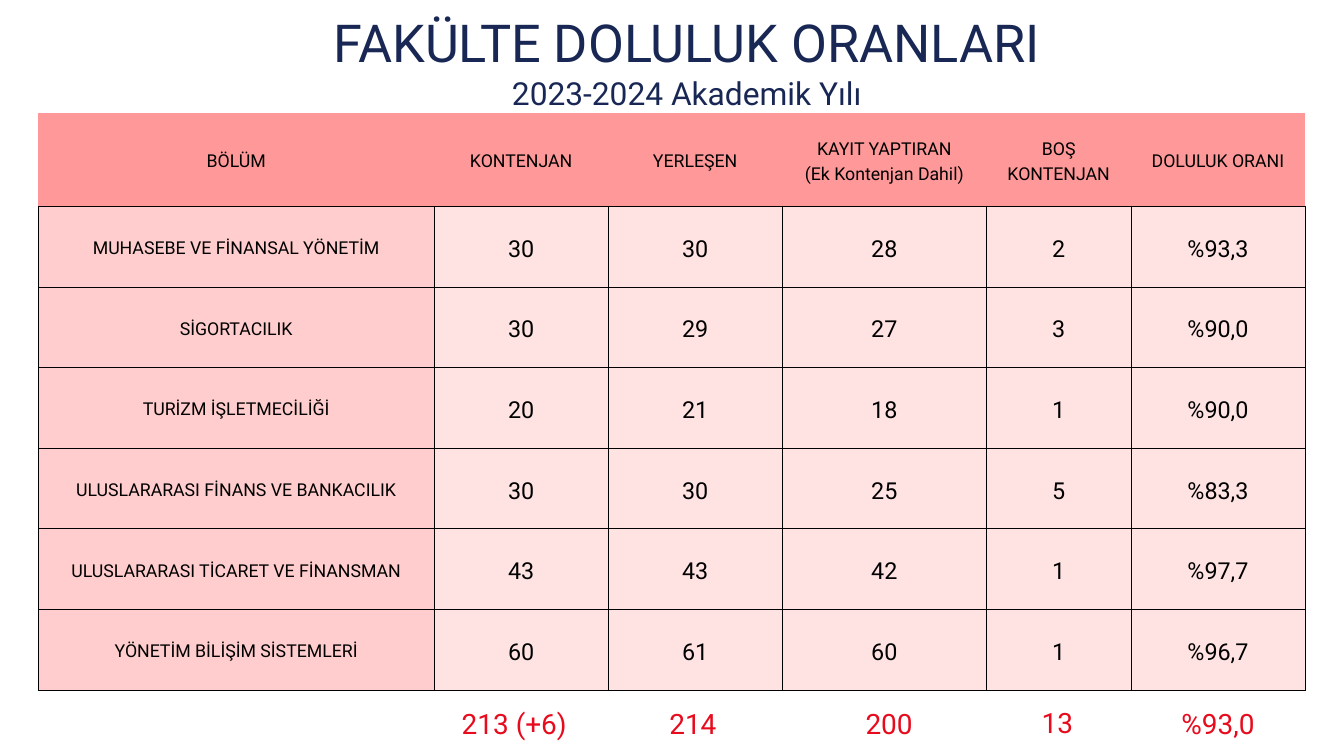
from dataclasses import dataclass
from lxml import etree
from pptx import Presentation
from pptx import util as u
from pptx.dml.color import RGBColor
from pptx.enum import text as t
from pptx.oxml.ns import qn

HUES = {"head": "FF9999", "name": "FFCDCD", "data": "FFE3E3",
        "line": "000000", "ink": "000000", "navy": "182754", "red": "E70B1D"}
WIDE, TALL = u.Inches(20), u.Inches(11.25)
MID, JUST = t.PP_ALIGN.CENTER, t.PP_ALIGN.JUSTIFY
PAD = u.Inches(0.21)


@dataclass(frozen=True)
class Look:
    size: int
    lead: float
    hue: str
    align: t.PP_ALIGN = MID


@dataclass(frozen=True)
class Box:
    left: float
    top: float
    width: float
    height: float


@dataclass(frozen=True)
class Total:
    words: str
    left: float
    width: float
    top: float = 92.71


TITLE = Look(56, 61.6, "navy")
YEAR = Look(34, 37.4, "navy")
LABEL = Look(19, 26.6, "ink")
VALUE = Look(25, 35, "ink")
SUM = Look(30, 42, "red", JUST)

GRID = Box(2.85, 14.93, 94.3, 76.38)
COLS = [29.45, 12.95, 12.95, 15.2, 10.75, 12.95]
ROWS = [12.36] + [10.67] * 6
CELLS = [
    ["BÖLÜM", "KONTENJAN", "YERLEŞEN", "KAYIT YAPTIRAN\n(Ek Kontenjan Dahil)",
     "BOŞ KONTENJAN", "DOLULUK ORANI"],
    ["MUHASEBE VE FİNANSAL YÖNETİM", "30", "30", "28", "2", "%93,3"],
    ["SİGORTACILIK", "30", "29", "27", "3", "%90,0"],
    ["TURİZM İŞLETMECİLİĞİ", "20", "21", "18", "1", "%90,0"],
    ["ULUSLARARASI FİNANS VE BANKACILIK", "30", "30", "25", "5", "%83,3"],
    ["ULUSLARARASI TİCARET VE FİNANSMAN", "43", "43", "42", "1", "%97,7"],
    ["YÖNETİM BİLİŞİM SİSTEMLERİ", "60", "61", "60", "1", "%96,7"],
]
TOTALS = [
    Total("213 (+6)", 34.35, 8.15),
    Total("214", 49.8, 4.05),
    Total("200", 64.4, 4.95),
    Total("13", 77.5, 3.4, 92.62),
    Total("%93,0", 87.9, 6.55),
]


def across(share: float) -> int:
    return round(WIDE * share / 100)


def down(share: float) -> int:
    return round(TALL * share / 100)


def apply(thing, **vals) -> None:
    for key, val in vals.items():
        setattr(thing, key, val)


def place(box: Box) -> dict:
    return {"left": across(box.left), "top": down(box.top),
            "width": across(box.width), "height": down(box.height)}


def write(frame, words: str, look: Look) -> None:
    frame.text = words
    for para in frame.paragraphs:
        apply(para, alignment=look.align, line_spacing=u.Pt(look.lead))
        for run in para.runs:
            apply(run.font, name="Roboto", size=u.Pt(look.size), bold=False)
            run.font.color.rgb = RGBColor.from_string(HUES[look.hue])


def label(shape, box: Box, words: str, look: Look) -> None:
    apply(shape, **place(box))
    frame = shape.text_frame
    apply(frame, margin_left=0, margin_right=0, margin_top=0, margin_bottom=0,
          word_wrap=True, vertical_anchor=t.MSO_ANCHOR.TOP,
          auto_size=t.MSO_AUTO_SIZE.SHAPE_TO_FIT_TEXT)
    write(frame, words, look)


def edge(cell, side: str, hue: str, width: float) -> None:
    props = cell._tc.get_or_add_tcPr()
    line = etree.SubElement(props, qn(f"a:ln{side}"), w=str(u.Pt(width)))
    fill = etree.SubElement(line, qn("a:solidFill"))
    etree.SubElement(fill, qn("a:srgbClr"), val=HUES[hue])


def paint(cell, words: str, row: int, col: int) -> None:
    kind = "head" if row == 0 else "name" if col == 0 else "data"
    apply(cell, margin_left=PAD, margin_right=PAD, margin_top=PAD,
          margin_bottom=PAD, vertical_anchor=t.MSO_ANCHOR.MIDDLE)
    for side in "LRTB":
        bare = kind == "head" and side != "B"
        edge(cell, side, "head" if bare else "line", 0 if bare else 1)
    cell.fill.solid()
    cell.fill.fore_color.rgb = RGBColor.from_string(HUES[kind])
    write(cell.text_frame, words, VALUE if kind == "data" else LABEL)


def rates(slide) -> None:
    table = slide.shapes.add_table(len(ROWS), len(COLS), **place(GRID)).table
    apply(table, first_row=False, horz_banding=False)
    for col, share in zip(table.columns, COLS):
        col.width = across(share)
    for row, share in zip(table.rows, ROWS):
        row.height = down(share)
    for r, line in enumerate(CELLS):
        for c, words in enumerate(line):
            paint(table.cell(r, c), words, r, c)


def main() -> None:
    deck = Presentation()
    apply(deck, slide_width=WIDE, slide_height=TALL)
    slide = deck.slides.add_slide(deck.slide_layouts.get_by_name("Title Only"))
    rates(slide)
    label(slide.shapes.title, Box(6.75, 2.04, 88.75, 7.91),
          "FAKÜLTE DOLULUK ORANLARI", TITLE)
    texts = [(Box(31.55, 10.22, 39.1, 4.8), "2023-2024 Akademik Yılı", YEAR)]
    texts += [(Box(s.left, s.top, s.width, 5.24), s.words, SUM) for s in TOTALS]
    for box, words, look in texts:
        label(slide.shapes.add_textbox(**place(box)), box, words, look)
    deck.save("out.pptx")


if __name__ == "__main__":
    main()
